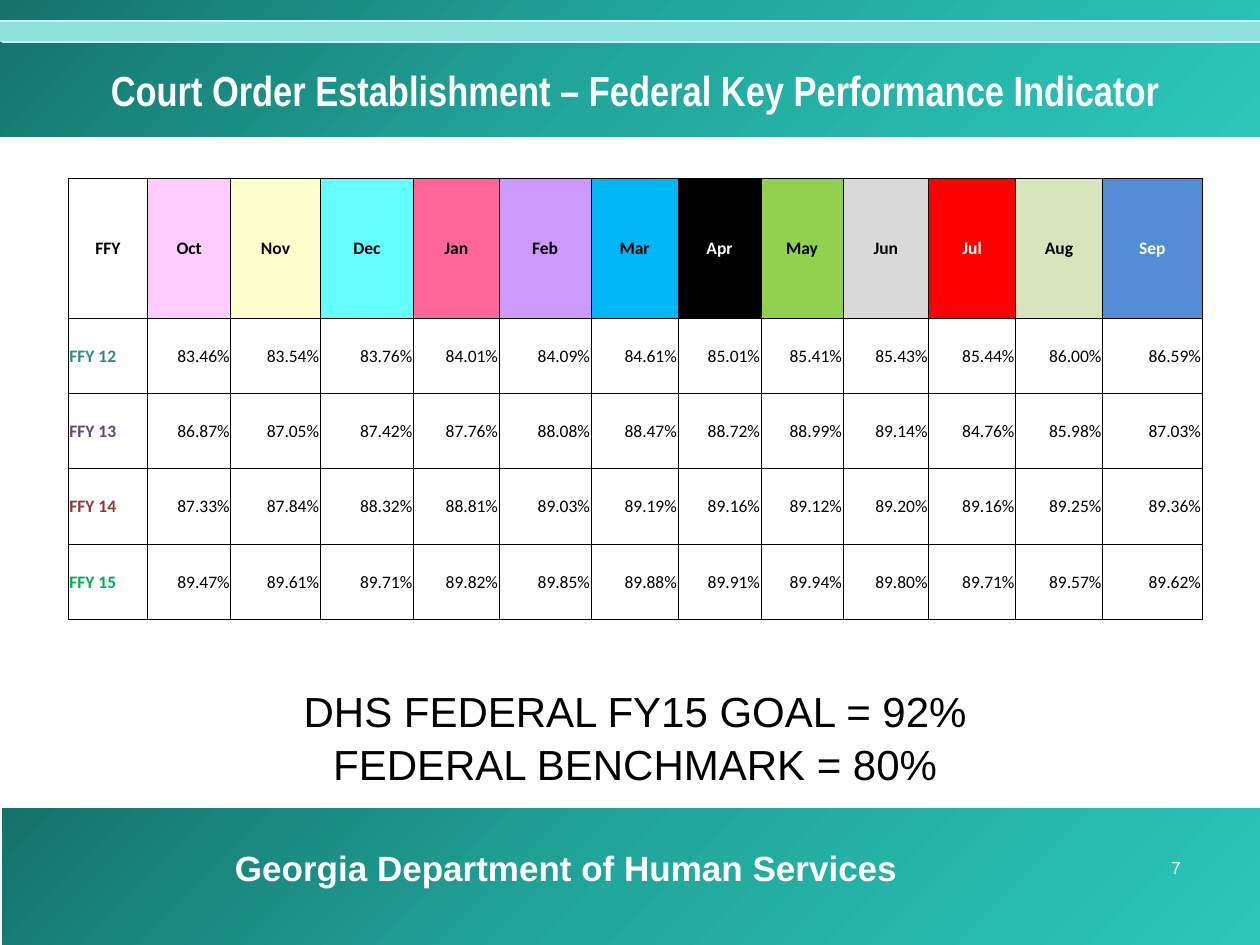
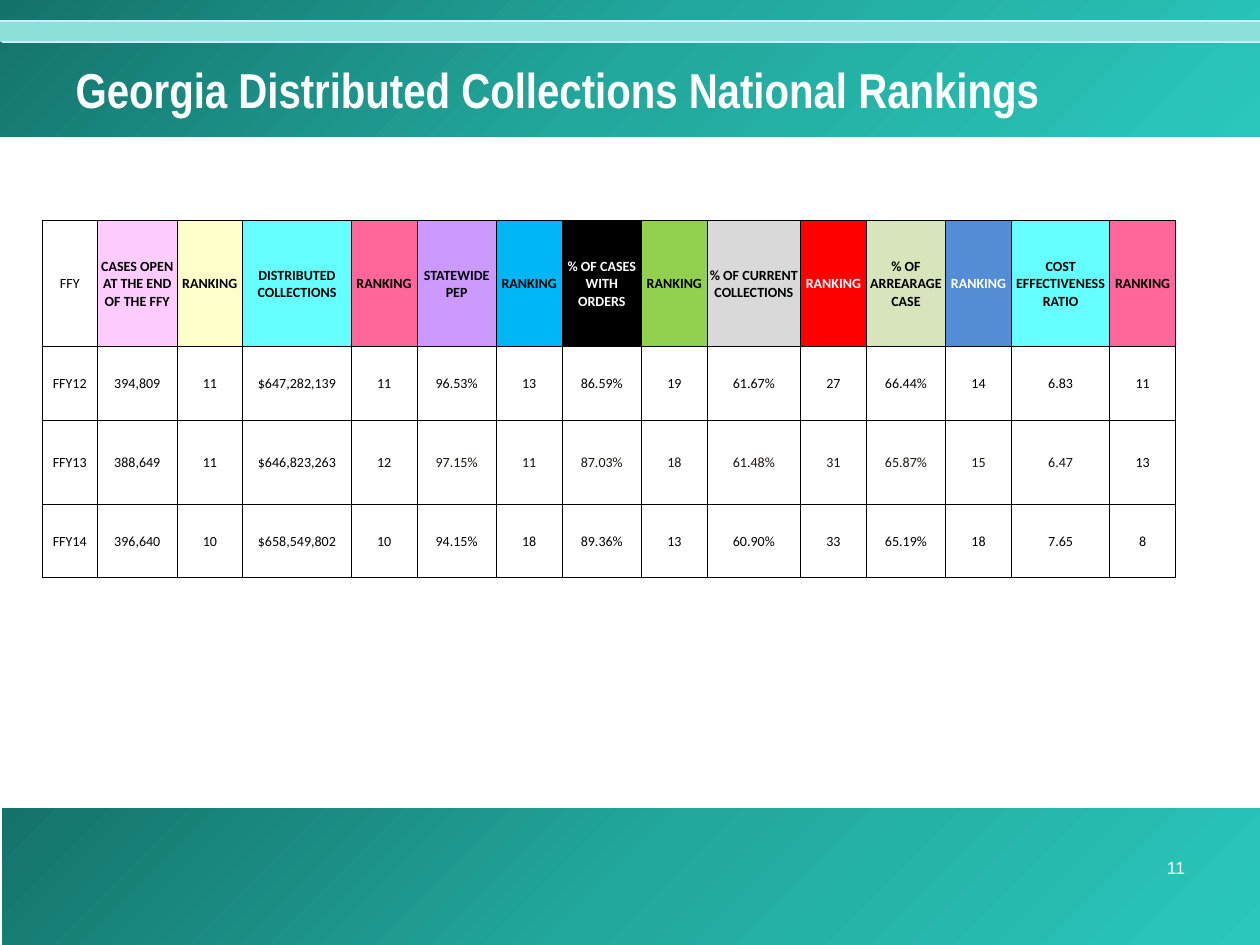
from copy import deepcopy
from lxml.etree import SubElement as Sub
from pptx import Presentation
from pptx.dml.color import RGBColor as RGB
from pptx.enum.shapes import MSO_CONNECTOR as Conn, MSO_SHAPE as Kind
from pptx.enum.text import MSO_ANCHOR as Anchor, MSO_AUTO_SIZE as Auto, PP_ALIGN as Align
from pptx.oxml.ns import qn
from pptx.util import Inches, Pt

# Colours
WHITE, BLACK = RGB(255, 255, 255), RGB(0, 0, 0)
TEALS = [RGB(0x14, 0x73, 0x6B), RGB(0x22, 0xA7, 0x9C), RGB(0x2B, 0xC7, 0xBB)]
MINT, ICE = RGB(0x8D, 0xDF, 0xD9), RGB(0xCC, 0xEC, 0xFF)
INK = RGB(0x19, 0x15, 0x0F)
PINK, CREAM, AQUA = RGB(255, 0xCC, 255), RGB(255, 255, 0xCC), RGB(0x66, 255, 255)
ROSE, LILAC, SKY = RGB(255, 0x66, 0x99), RGB(0xCC, 0x99, 255), RGB(0, 0xB6, 0xF6)
LIME, GREY, RED = RGB(0x92, 0xD0, 0x50), RGB(0xD9, 0xD9, 0xD9), RGB(255, 0, 0)
SAGE, BLUE = RGB(0xD8, 0xE4, 0xBC), RGB(0x53, 0x8D, 0xD5)
HEADS = [PINK, CREAM, AQUA, ROSE, LILAC, SKY, BLACK, LIME, GREY, RED, SAGE, BLUE]
DARK = (BLACK, RED, BLUE)
YEARS = [RGB(0x31, 0x86, 0x9B), RGB(0x60, 0x49, 0x7A), RGB(0x96, 0x36, 0x34),
         RGB(0, 0xB0, 0x50)]

# Slide grid: 120 columns by 90 rows
deck = Presentation()
deck.slide_width, deck.slide_height = Inches(10), Inches(7.5)
U = deck.slide_width // 120


def write(box, spot, text, size, align=Align.LEFT, face="Arial", tint=WHITE, bold=False):
    """Place a text shape on the grid, then fill and format it."""
    box.left, box.top, box.width, box.height = [int(n * U) for n in spot]
    frame = box.text_frame
    frame.text = text
    frame.word_wrap, frame.auto_size = True, Auto.NONE
    for para in frame.paragraphs:
        para.alignment = align
        font = para.runs[0].font
        font.name, font.size, font.bold = face, Pt(size), bold
        font.color.rgb = tint


def table(slide, spot, cols, lines, rows, size):
    """Add a ruled table; cols and lines are shares of its width and height."""
    x, y, w, h = [int(n * U) for n in spot]
    grid = slide.shapes.add_table(len(rows), len(cols), x, y, w, h).table
    grid.first_row = grid.horz_banding = False
    for col, part in zip(grid.columns, cols):
        col.width = int(w * part / sum(cols))
    for line, part in zip(grid.rows, lines):
        line.height = int(h * part / sum(lines))
    for r, row in enumerate(rows):
        for c, text in enumerate(row):
            cell = grid.cell(r, c)
            cell.text = text
            cell.vertical_anchor = Anchor.MIDDLE
            cell.margin_left = cell.margin_right = cell.margin_top = Inches(0.01)
            cell.margin_bottom = 0
            for side in ("a:lnL", "a:lnR", "a:lnT", "a:lnB"):
                edge = Sub(cell._tc.get_or_add_tcPr(), qn(side), w=str(Pt(0.5)))
                Sub(Sub(edge, qn("a:solidFill")), qn("a:srgbClr"), val=str(BLACK))
            para = cell.text_frame.paragraphs[0]
            para.alignment = Align.CENTER
            font = para.runs[0].font
            font.name, font.size, font.bold = "Calibri", Pt(size), r == 0
            font.color.rgb = BLACK
            if r == 0 and c > 0:
                shade = HEADS[(c - 1) % 12] if c < 13 else HEADS[c - 11]
                cell.fill.solid()
                cell.fill.fore_color.rgb = shade
                font.color.rgb = WHITE if shade in DARK else BLACK
            else:
                cell.fill.background()
    return grid


# Shared bands and rules, moved to the layout
plan = deck.slide_layouts[5]
first, second = [deck.slides.add_slide(plan) for _ in range(2)]
parts = []
for x, y, h in [(0.2, 77, 13), (0, 0, 13), (0, 2, 2)]:
    band = first.shapes.add_shape(Kind.RECTANGLE, int(x * U), y * U, int((120 - x) * U), h * U)
    band.shadow.inherit = False
    band.line.fill.background()
    if h == 2:
        band.fill.solid()
        band.fill.fore_color.rgb = MINT
    else:
        band.fill.gradient()
        band.fill.gradient_angle = 315
        stop = next(band.element.iter(qn("a:gs")))
        stop.addnext(deepcopy(stop))
        for stop, place, teal in zip(band.fill.gradient_stops, (0, 0.5, 1), TEALS):
            stop.position, stop.color.rgb = place, teal
    parts.append(band)
for x, y in [(0, 2), (0.2, 4)]:
    rule = first.shapes.add_connector(Conn.STRAIGHT, int(x * U), y * U, 120 * U, y * U)
    rule.line.color.rgb, rule.line.width = ICE, Pt(1.5)
    Sub(rule.element.spPr, qn("a:effectLst"))
    parts.append(rule)
for n, part in enumerate(parts):
    next(part.element.iter(qn("p:cNvPr"))).set("id", str(20 + n))
    plan.shapes.element.insert(2 + n, part.element)

# Titles and page numbers
for slide, spot, text, size, align, page in [
    (first, (1, 4, 119, 9), "Court Order Establishment – Federal Key Performance Indicator",
     24, Align.CENTER, "7"),
    (second, (6, 1, 104, 15), "Georgia Distributed Collections National Rankings",
     28, Align.LEFT, "11"),
]:
    write(slide.shapes.title, spot, text, size, align, "Arial Narrow", bold=True)
    slide.shapes.title.text_frame.vertical_anchor = Anchor.MIDDLE
    write(slide.shapes.add_textbox(0, 0, U, U), (108, 81, 8, 5), page, 10, Align.CENTER)

# Court orders: agency name and goals
write(first.shapes.add_textbox(0, 0, U, U), (21.2, 80, 75, 5.25),
      "Georgia Department of Human Services", 20, bold=True)
goal = first.shapes.add_textbox(0, 0, U, U)
write(goal, (5, 64.5, 111, 11), "DHS FEDERAL FY15 GOAL = 92%\nFEDERAL BENCHMARK = 80%",
      24, Align.CENTER, tint=BLACK)
for para in goal.text_frame.paragraphs:
    para.line_spacing = 1.05

# Court orders: monthly rates
months = "FFY Oct Nov Dec Jan Feb Mar Apr May Jun Jul Aug Sep".split()
rates = [
    [83.46, 83.54, 83.76, 84.01, 84.09, 84.61, 85.01, 85.41, 85.43, 85.44, 86.00, 86.59],
    [86.87, 87.05, 87.42, 87.76, 88.08, 88.47, 88.72, 88.99, 89.14, 84.76, 85.98, 87.03],
    [87.33, 87.84, 88.32, 88.81, 89.03, 89.19, 89.16, 89.12, 89.20, 89.16, 89.25, 89.36],
    [89.47, 89.61, 89.71, 89.82, 89.85, 89.88, 89.91, 89.94, 89.80, 89.71, 89.57, 89.62],
]
rows = [months] + [[f"FFY {12 + n}"] + [f"{rate:.2f}%" for rate in row]
                   for n, row in enumerate(rates)]
cols = [0.63, 0.66, 0.71, 0.74, 0.68, 0.73, 0.69, 0.66, 0.65, 0.68, 0.69, 0.69, 0.79]
grid = table(first, (6.5, 17, 108, 42), cols, [1.11] + [0.6] * 4, rows, 10)
for r, tint in enumerate(YEARS, 1):
    for c in range(len(cols)):
        para = grid.cell(r, c).text_frame.paragraphs[0]
        para.alignment = Align.RIGHT if c else Align.LEFT
    font = grid.cell(r, 0).text_frame.paragraphs[0].runs[0].font
    font.bold, font.color.rgb = True, tint

# Collections: national rankings
topics = ["CASES OPEN AT THE END OF THE FFY", "DISTRIBUTED COLLECTIONS", "STATEWIDE PEP",
          "% OF CASES WITH ORDERS", "% OF CURRENT COLLECTIONS", "% OF ARREARAGE CASE",
          "COST EFFECTIVENESS RATIO"]
rows = [
    ["FFY"] + [text for topic in topics for text in (topic, "RANKING")],
    "FFY12 394,809 11 $647,282,139 11 96.53% 13 86.59% 19 61.67% 27 66.44% 14 6.83 11".split(),
    "FFY13 388,649 11 $646,823,263 12 97.15% 11 87.03% 18 61.48% 31 65.87% 15 6.47 13".split(),
    "FFY14 396,640 10 $658,549,802 10 94.15% 18 89.36% 13 60.90% 33 65.19% 18 7.65 8".split(),
]
cols = [0.44] + [w for wide in (0.63, 0.86, 0.63, 0.63, 0.74, 0.63, 0.78) for w in (wide, 0.52)]
grid = table(second, (4, 21, 108, 34), cols, [12, 7, 8, 7], rows, 8)
grid.cell(0, 0).text_frame.paragraphs[0].runs[0].font.bold = False
for c in range(5, 14):
    grid.cell(2, c).text_frame.paragraphs[0].runs[0].font.color.rgb = INK

deck.save("out.pptx")
